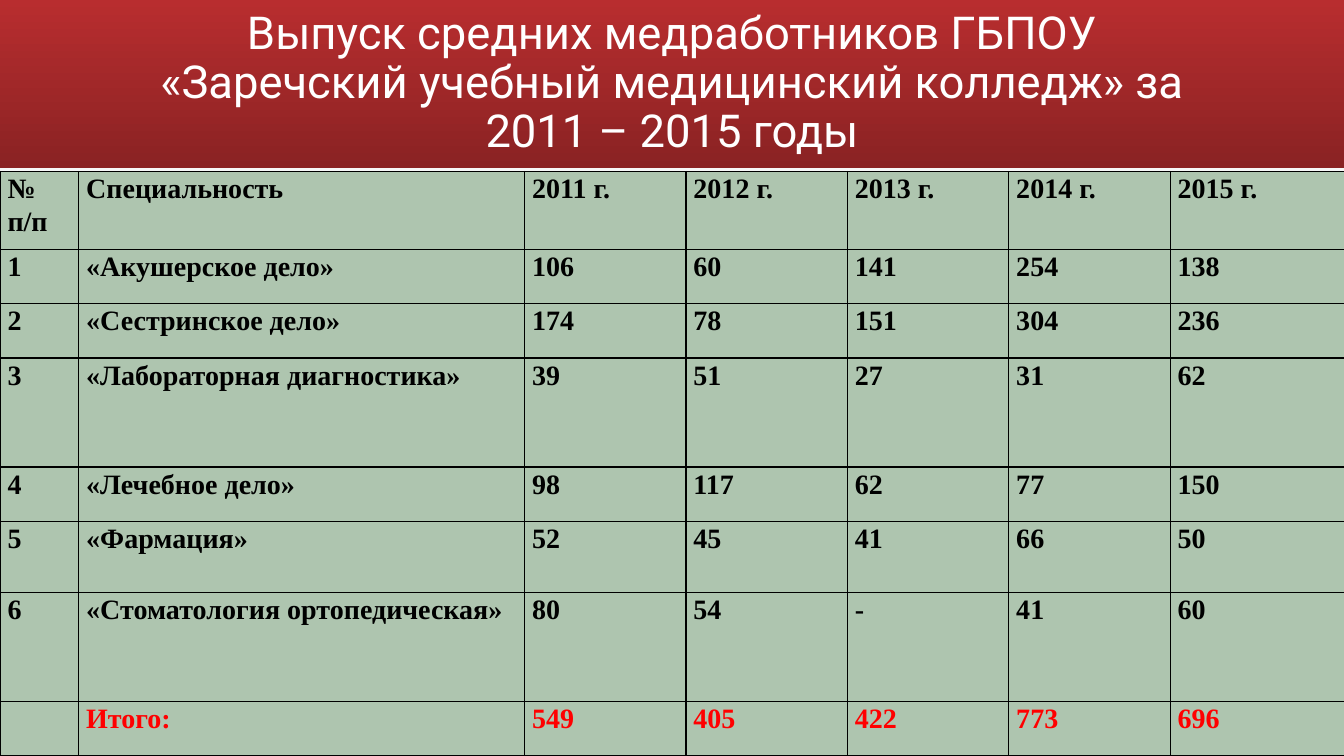
from lxml import etree
from pptx import Presentation
from pptx.dml.color import RGBColor
from pptx.enum.shapes import MSO_SHAPE
from pptx.enum.text import MSO_ANCHOR, MSO_AUTO_SIZE, PP_ALIGN
from pptx.oxml.ns import qn
from pptx.util import Pt

RECTANGLE = MSO_SHAPE.RECTANGLE
MIDDLE = MSO_ANCHOR.MIDDLE
NO_AUTOFIT = MSO_AUTO_SIZE.NONE
LEFT, CENTER = PP_ALIGN.LEFT, PP_ALIGN.CENTER

TITLE = "Выпуск средних медработников ГБПОУ «Заречский учебный медицинский колледж» за 2011 – 2015 годы"
ROWS = [
    ("№ п/п", "Специальность", "2011 г.", "2012 г.", "2013 г.", "2014 г.", "2015 г."),
    ("1", "«Акушерское дело»", "106", "60", "141", "254", "138"),
    ("2", "«Сестринское дело»", "174", "78", "151", "304", "236"),
    ("3", "«Лабораторная диагностика»", "39", "51", "27", "31", "62"),
    ("4", "«Лечебное дело»", "98", "117", "62", "77", "150"),
    ("5", "«Фармация»", "52", "45", "41", "66", "50"),
    ("6", "«Стоматология ортопедическая»", "80", "54", "-", "41", "60"),
    ("", "Итого:", "549", "405", "422", "773", "696"),
]
COLUMN_WIDTHS = [56.2, 318.5] + [115.3] * 4 + [126]
ROW_HEIGHTS = [55.6, 38.9, 38.9, 77.8, 38.9, 50.7, 77.8, 38.9]
SLIDE_WIDTH, SLIDE_HEIGHT = 960, 540
BAND_HEIGHT = 120
TABLE_TOP = 122.4
CELL_INSET = 5.4


def color(value):
    return RGBColor.from_string(value)


def set_gradient(fill, start, end, angle):
    fill.gradient()
    fill.gradient_angle = angle
    for stop, value in zip(fill.gradient_stops, (start, end)):
        stop.color.rgb = color(value)


def write_text(frame, text, font, size, fill, bold=False, align=LEFT, spacing=1.0):
    paragraph = frame.paragraphs[0]
    paragraph.alignment = align
    paragraph.line_spacing = spacing
    run = paragraph.add_run()
    run.text = text
    run.font.name = font
    run.font.size = Pt(size)
    run.font.bold = bold
    run.font.color.rgb = color(fill)


def add_borders(cell, value, width):
    properties = cell._tc.get_or_add_tcPr()
    for position, side in enumerate(("a:lnL", "a:lnR", "a:lnT", "a:lnB")):
        line = etree.Element(qn(side), w=str(Pt(width)))
        solid = etree.SubElement(line, qn("a:solidFill"))
        etree.SubElement(solid, qn("a:srgbClr"), val=value)
        properties.insert(position, line)


def add_title(slide):
    title = slide.shapes.title
    title.left, title.top, title.width, title.height = Pt(84), Pt(8), Pt(792), Pt(104)
    frame = title.text_frame
    frame.word_wrap = True
    frame.auto_size = NO_AUTOFIT
    frame.vertical_anchor = MIDDLE
    write_text(frame, TITLE, font="Roboto", size=32.4, fill="FFFFFF", align=CENTER, spacing=0.9)

    band = slide.shapes.add_shape(RECTANGLE, 0, 0, Pt(SLIDE_WIDTH), Pt(BAND_HEIGHT))
    band.shadow.inherit = False
    band.line.fill.background()
    set_gradient(band.fill, "B82D2F", "8A2223", 270)
    title.element.addprevious(band.element)


def add_graduates_table(slide):
    table = slide.shapes.add_table(
        len(ROWS), len(COLUMN_WIDTHS), 0, Pt(TABLE_TOP),
        Pt(sum(COLUMN_WIDTHS)), Pt(sum(ROW_HEIGHTS)),
    ).table
    for column, width in zip(table.columns, COLUMN_WIDTHS):
        column.width = Pt(width)
    for row, height in zip(table.rows, ROW_HEIGHTS):
        row.height = Pt(height)
    for row_index, values in enumerate(ROWS):
        text_color = "FF0000" if row_index == len(ROWS) - 1 else "000000"
        for column_index, value in enumerate(values):
            cell = table.cell(row_index, column_index)
            cell.margin_left = cell.margin_right = Pt(CELL_INSET)
            cell.margin_top = cell.margin_bottom = 0
            cell.fill.solid()
            cell.fill.fore_color.rgb = color("AEC5AF")
            add_borders(cell, "000000", 1)
            if value:
                write_text(cell.text_frame, value, font="Times New Roman", size=20,
                           fill=text_color, bold=True, spacing=1.07)


def main():
    presentation = Presentation()
    presentation.slide_width, presentation.slide_height = Pt(SLIDE_WIDTH), Pt(SLIDE_HEIGHT)
    slide = presentation.slides.add_slide(presentation.slide_layouts[5])
    set_gradient(slide.background.fill, "D9D9D9", "FFFFFF", 90)
    add_title(slide)
    add_graduates_table(slide)
    presentation.save("out.pptx")


if __name__ == "__main__":
    main()
